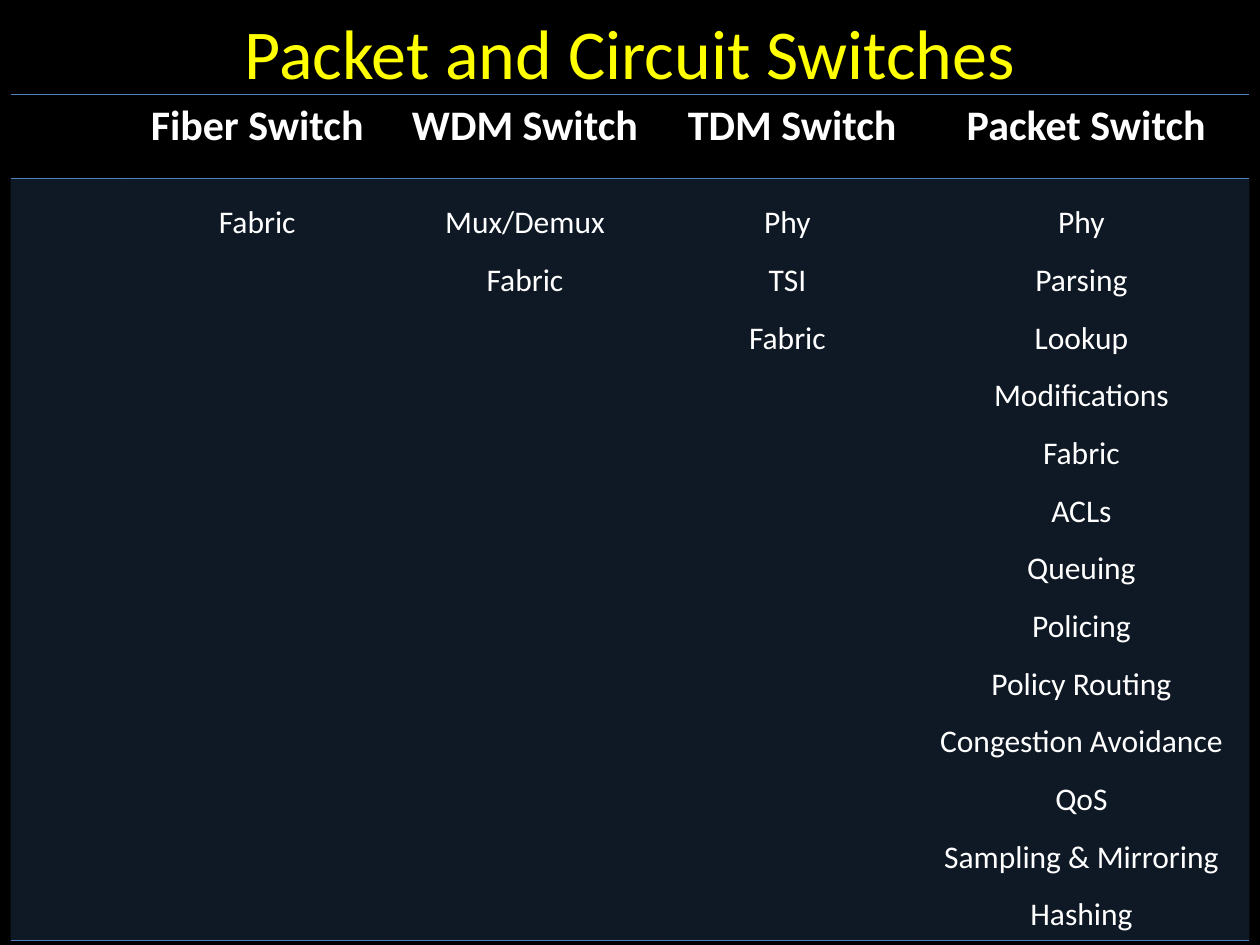
"""Build the Packet and Circuit Switches slide."""
import pptx
import pptx.dml.color
import pptx.enum.dml
import pptx.enum.text
import pptx.oxml
import pptx.oxml.ns
import pptx.util

Pt = pptx.util.Pt
RGBColor = pptx.dml.color.RGBColor
qn = pptx.oxml.ns.qn
CENTER = pptx.enum.text.PP_ALIGN.CENTER
ANCHOR = pptx.enum.text.MSO_ANCHOR

BLACK = RGBColor(0x00, 0x00, 0x00)
WHITE = RGBColor(0xFF, 0xFF, 0xFF)
YELLOW = RGBColor(0xFF, 0xFF, 0x00)
BLUE = RGBColor(0x4F, 0x81, 0xBD)
NS = 'xmlns:a="http://schemas.openxmlformats.org/drawingml/2006/main"'
NO_GRID = "{2D5ABB26-0587-4C30-8999-92F81FD0307C}"

SWITCHES = [
    ("", []),
    ("Fiber Switch", ["Fabric"]),
    ("WDM Switch", ["Mux/Demux", "Fabric"]),
    (" TDM Switch", ["Phy", "TSI", "Fabric"]),
    (" Packet Switch", [
        "Phy", "Parsing", "Lookup", "Modifications", "Fabric", "ACLs",
        "Queuing", "Policing", "Policy Routing", "Congestion Avoidance",
        "QoS", "Sampling & Mirroring", "Hashing"]),
]
WIDTHS = [66, 150, 156, 144, 192]
HEIGHTS = [48, 435.4]
TITLE = {"size": Pt(40), "bold": False}
HEADER = {"size": Pt(24), "bold": True}
BODY = {"size": Pt(18), "bold": False}


def write(tf, lines, style, color, spacing=1.0):
    for i, line in enumerate(lines):
        p = tf.add_paragraph() if i else tf.paragraphs[0]
        p.alignment = CENTER
        p.line_spacing = spacing
        r = p.add_run()
        r.text = line
        r.font.name = "Calibri"
        r.font.color.rgb = color
        for name, value in style.items():
            setattr(r.font, name, value)


def add_borders(cell, visible):
    for side in ("lnL", "lnR", "lnT", "lnB"):
        if side in visible:
            fill = f'<a:solidFill><a:srgbClr val="{BLUE}"/></a:solidFill>'
        else:
            fill = "<a:noFill/>"
        line = pptx.oxml.parse_xml(f'<a:{side} {NS} w="12700">{fill}</a:{side}>')
        cell._tc.get_or_add_tcPr().append(line)


prs = pptx.Presentation()
prs.slide_width, prs.slide_height = Pt(720), Pt(540)
s = prs.slides.add_slide(prs.slide_layouts[6])
s.background.fill.solid()
s.background.fill.fore_color.rgb = BLACK

sp = s.shapes.add_textbox(Pt(36), Pt(0), Pt(648), Pt(42))
tf = sp.text_frame
tf.word_wrap = True
tf.margin_top = Pt(5.4)
write(tf, ["Packet and Circuit Switches"], TITLE, YELLOW)

sp = s.shapes.add_table(2, len(SWITCHES), Pt(6), Pt(54), Pt(sum(WIDTHS)), Pt(sum(HEIGHTS)))
table = sp.table
table.first_row = table.horz_banding = False
table._tbl.tblPr.find(qn("a:tableStyleId")).text = NO_GRID
for row, height in zip(table.rows, HEIGHTS):
    row.height = Pt(height)

for col, (name, functions) in enumerate(SWITCHES):
    table.columns[col].width = Pt(WIDTHS[col])
    header, body = table.cell(0, col), table.cell(1, col)
    if name:
        write(header.text_frame, [name], HEADER, WHITE)
    write(body.text_frame, functions, BODY, WHITE, 1.5)
    add_borders(header, ("lnT", "lnB"))
    add_borders(body, ("lnT", "lnB"))
    header.fill.background()
    body.fill.solid()
    body.fill.fore_color.rgb = BLUE
    color = body._tc.tcPr.find(qn("a:solidFill"))[0]
    color.append(pptx.oxml.parse_xml(f'<a:alpha {NS} val="20000"/>'))
table.cell(1, len(SWITCHES) - 1).vertical_anchor = ANCHOR.MIDDLE

prs.save("out.pptx")
